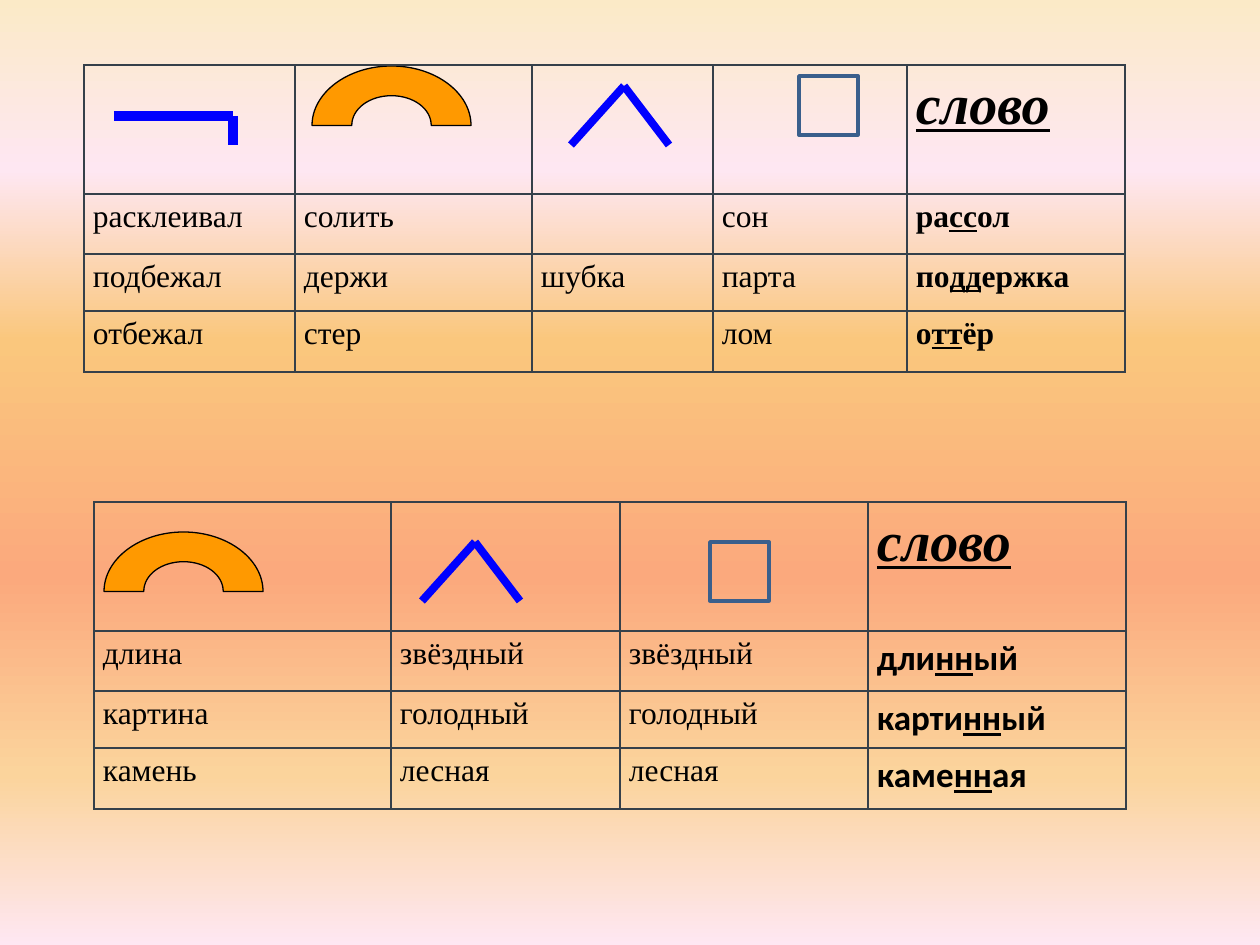
from dataclasses import dataclass

from lxml.etree import SubElement
from pptx import Presentation
from pptx.dml.color import RGBColor
from pptx.enum.shapes import MSO_CONNECTOR, MSO_SHAPE
from pptx.oxml import parse_xml
from pptx.oxml.ns import nsdecls, qn
from pptx.util import Pt

LINE = MSO_CONNECTOR.STRAIGHT
RECT = MSO_SHAPE.RECTANGLE
SCALE = 914400 / 126


@dataclass(frozen=True)
class Theme:
    ink: str = "000000"
    blue: str = "0000FF"
    gold: str = "FF9900"
    steel: str = "3A5F8C"
    grid: str = "35404A"
    sky: tuple = (
        (0, "FBEAC7"), (18, "FEE7F2"), (36, "FAC77D"),
        (61, "FBA97D"), (82, "FBD49C"), (100, "FEE7F2"),
    )
    serif: str = "Times New Roman"
    sans: str = "Calibri"
    head: int = 32
    body: int = 18
    large: int = 20


THEME = Theme()
PLAIN = {"name": THEME.serif, "size": Pt(THEME.body), "bold": False}
TITLE = {"name": THEME.serif, "size": Pt(THEME.head), "bold": True,
         "italic": True, "underline": True}
SERIF = PLAIN | {"bold": True}
SANS = {"name": THEME.sans, "size": Pt(THEME.large), "bold": True}
INSET = {"margin_left": 9, "margin_right": 9, "margin_top": 0, "margin_bottom": 0}
ROWS = (129, 60, 57, 61)
ARCH = (
    ("moveTo", [(40, 60)]),
    ("cubicBezTo", [(40, 43), (58, 30), (80, 30)]),
    ("cubicBezTo", [(102, 30), (120, 43), (120, 60)]),
    ("lnTo", [(160, 60)]),
    ("cubicBezTo", [(160, 27), (124, 0), (80, 0)]),
    ("cubicBezTo", [(36, 0), (0, 27), (0, 60)]),
    ("close", []),
)


def px(size):
    return round(size * SCALE)


def apply(item, form):
    for key, value in form.items():
        setattr(item, key, value)


def paint_sky(slide):
    fill = slide.background.fill
    fill.gradient()
    fill.gradient_angle = 270
    stops = slide.element.find(".//" + qn("a:gsLst"))
    stops.clear()
    for place, tint in THEME.sky:
        stop = SubElement(stops, qn("a:gs"), pos=str(place * 1000))
        SubElement(stop, qn("a:srgbClr"), val=tint)


def edge_cell(cell):
    cell.fill.background()
    props = cell._tc.get_or_add_tcPr()
    for spot, side in enumerate("LRTB"):
        props.insert(spot, parse_xml(
            f'<a:ln{side} {nsdecls("a")} w="{Pt(1)}"><a:solidFill>'
            f'<a:srgbClr val="{THEME.grid}"/></a:solidFill></a:ln{side}>'))


def write_cell(cell, text, form):
    para = cell.text_frame.paragraphs[0]
    para.line_spacing = 1.15
    for index, part in enumerate(text.split("|")):
        run = para.add_run()
        run.text = part
        apply(run.font, form)
        if index == 1:
            run.font.underline = True
        run.font.color.rgb = RGBColor.from_string(THEME.ink)


def add_grid(slide, left, top, cols, words, last):
    frame = slide.shapes.add_table(
        len(ROWS), len(cols), px(left), px(top), px(sum(cols)), px(sum(ROWS)))
    table = frame.table
    apply(table, {"first_row": False, "horz_banding": False})
    for col, width in zip(table.columns, cols):
        col.width = px(width)
    for row, height in zip(table.rows, ROWS):
        row.height = px(height)
    end = len(cols) - 1
    lines = [[""] * end + ["слово"], *words]
    for r, line in enumerate(lines):
        for c, text in enumerate(line):
            cell = table.cell(r, c)
            apply(cell, {key: px(value) for key, value in INSET.items()})
            edge_cell(cell)
            form = PLAIN if c < end else last if r else TITLE
            if text:
                write_cell(cell, text, form)


def add_path(slide, points, width):
    for (x1, y1), (x2, y2) in zip(points, points[1:]):
        line = slide.shapes.add_connector(LINE, px(x1), px(y1), px(x2), px(y2))
        line.line.color.rgb = RGBColor.from_string(THEME.blue)
        line.line.width = Pt(width)
        SubElement(line._element.spPr, qn("a:effectLst"))


def add_prefix(slide, x, y):
    add_path(slide, [(x, y), (x + 119, y), (x + 119, y + 29)], 6)


def add_suffix(slide, x, y):
    add_path(slide, [(x, y), (x + 53, y - 59), (x + 98, y)], 4.5)


def add_root(slide, x, y):
    pen = slide.shapes.build_freeform(x, y, scale=SCALE)
    pen.add_line_segments([(x + 159, y), (x + 159, y + 119), (x, y + 119)])
    arch = pen.convert_to_shape()
    route = arch._element.find(".//" + qn("a:path"))
    route.clear()
    apply(route, {"w": 160, "h": 120})
    for kind, points in ARCH:
        step = SubElement(route, qn("a:" + kind))
        for a, b in points:
            SubElement(step, qn("a:pt"), x=str(a), y=str(b))
    arch.shadow.inherit = False
    arch.fill.solid()
    arch.fill.fore_color.rgb = RGBColor.from_string(THEME.gold)
    arch.line.color.rgb = RGBColor.from_string(THEME.ink)
    arch.line.width = Pt(0.75)


def add_ending(slide, x, y):
    box = slide.shapes.add_shape(RECT, px(x), px(y), px(59), px(59))
    box.shadow.inherit = False
    box.fill.background()
    box.line.color.rgb = RGBColor.from_string(THEME.steel)
    box.line.width = Pt(2)


def main():
    deck = Presentation()
    apply(deck, {"slide_width": px(1260), "slide_height": px(945)})
    slide = deck.slides.add_slide(deck.slide_layouts[6])
    paint_sky(slide)

    add_root(slide, 312, 66)
    add_prefix(slide, 114, 116)
    add_suffix(slide, 571, 145)
    add_grid(slide, 84, 65, (211, 237, 181, 194, 218), [
        ["расклеивал", "солить", "", "сон", "ра|сс|ол"],
        ["подбежал", "держи", "шубка", "парта", "по|дд|ержка"],
        ["отбежал", "стер", "", "лом", "о|тт|ёр"],
    ], SERIF)
    add_ending(slide, 799, 76)

    add_grid(slide, 94, 502, (297, 229, 248, 258), [
        ["длина", "звёздный", "звёздный", "дли|нн|ый"],
        ["картина", "голодный", "голодный", "карти|нн|ый"],
        ["камень", "лесная", "лесная", "каме|нн|ая"],
    ], SANS)
    add_ending(slide, 710, 542)
    add_suffix(slide, 422, 601)
    add_root(slide, 104, 532)

    deck.save("out.pptx")


if __name__ == "__main__":
    main()
